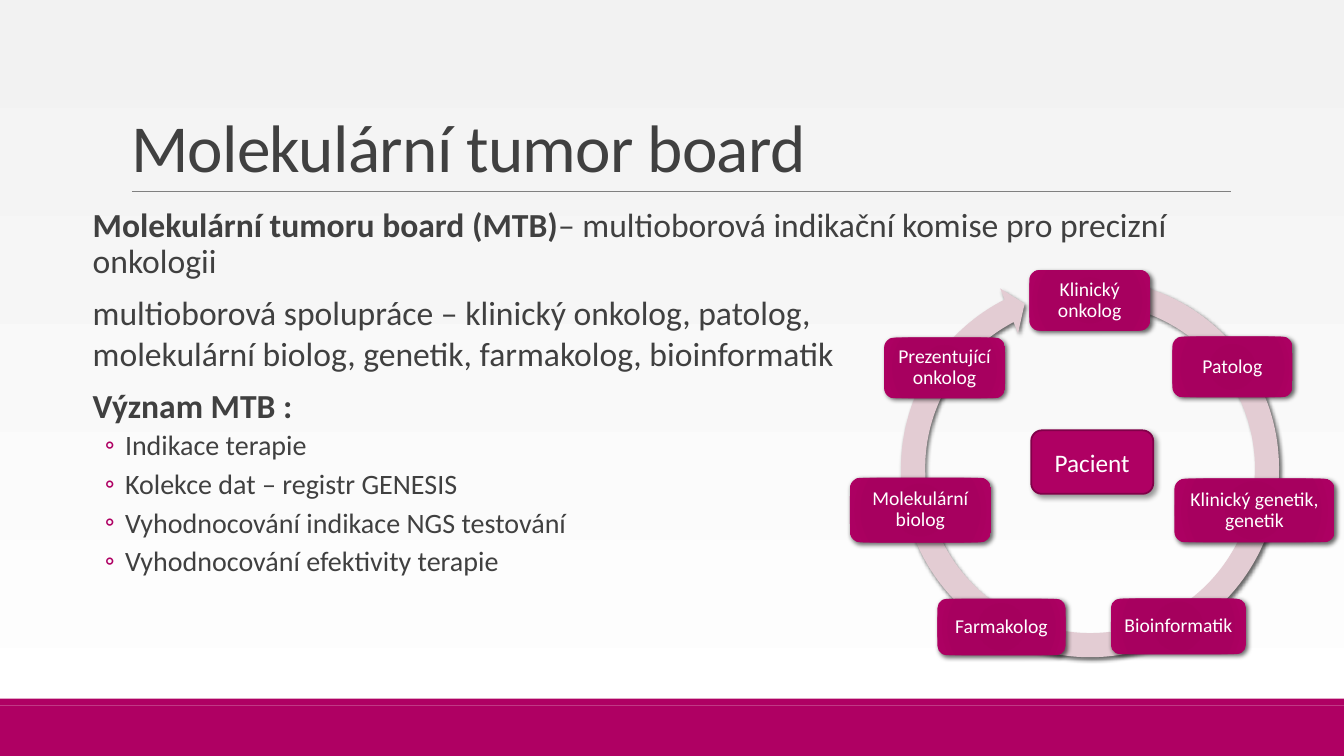
from dataclasses import dataclass

from lxml import etree
from pptx import Presentation, util as u
from pptx.dml.color import RGBColor
from pptx.enum import shapes, text
from pptx.oxml import ns


@dataclass(frozen=True)
class Theme:
    font: str = "Calibri"
    accent: str = "AF0063"
    accent_edge: str = "810049"
    ring: str = "E3CCD3"
    ink: str = "404040"
    rule: str = "808080"
    light: str = "FFFFFF"
    background: tuple = ("F2F2F2", "FFFFFF")
    card_stops: tuple = ((0, "A3005C"), (34, "A5005D"), (70, "A7005F"), (100, "AF0063"))
    title_size: int = 48
    body_size: int = 24
    list_size: int = 20
    centre_size: int = 18
    card_size: int = 14


def add_xml(parent, tag, **attributes):
    return etree.SubElement(parent, ns.qn(tag), {k: str(v) for k, v in attributes.items()})


class SlideBuilder:
    """Places elements on a grid of 100 columns by 100 rows."""

    def __init__(self, presentation, theme):
        self.theme = theme
        self.column = presentation.slide_width / 100
        self.row = presentation.slide_height / 100
        self.slide = presentation.slides.add_slide(presentation.slide_layouts[1])

    def box(self, left, top, width, height):
        return (round(left * self.column), round(top * self.row),
                round(width * self.column), round(height * self.row))

    def background(self):
        fill = self.slide.background.fill
        fill.gradient()
        fill.gradient_angle = 270
        for stop, color in zip(fill.gradient_stops, self.theme.background):
            stop.color.rgb = RGBColor.from_string(color)

    def style(self, paragraph, size, color, bold=None):
        font = paragraph.font
        font.name, font.size, font.bold = self.theme.font, u.Pt(size), bold
        font.color.rgb = RGBColor.from_string(color)

    def place(self, placeholder, area, anchor):
        placeholder.left, placeholder.top, placeholder.width, placeholder.height = self.box(*area)
        frame = placeholder.text_frame
        frame.auto_size = text.MSO_AUTO_SIZE.NONE
        frame.word_wrap = True
        frame.vertical_anchor = anchor
        return frame

    def title(self, wording, area):
        frame = self.place(self.slide.shapes.title, area, text.MSO_ANCHOR.BOTTOM)
        paragraph = frame.paragraphs[0]
        paragraph.alignment = text.PP_ALIGN.LEFT
        paragraph.line_spacing = 0.85
        self.style(paragraph, self.theme.title_size, self.theme.ink)
        run = paragraph.add_run()
        run.text = wording
        run._r.get_or_add_rPr().set("spc", "-50")

    def body(self, items, area):
        """Items are (level, line spacing, space before, space after, [(wording, bold)])."""
        frame = self.place(self.slide.placeholders[1], area, text.MSO_ANCHOR.TOP)
        frame.margin_left = frame.margin_right = 0
        for index, (level, spacing, before, after, pieces) in enumerate(items):
            paragraph = frame.add_paragraph() if index else frame.paragraphs[0]
            paragraph.level = level
            paragraph.line_spacing = spacing
            paragraph.space_before, paragraph.space_after = u.Pt(before), u.Pt(after)
            self.bullet(paragraph, level)
            agreed = pieces[0][1] if len(pieces) == 1 else None
            size = self.theme.list_size if level else self.theme.body_size
            self.style(paragraph, size, self.theme.ink, agreed)
            for wording, bold in pieces:
                run = paragraph.add_run()
                run.text = wording
                if agreed is None:
                    run.font.bold = bold

    def bullet(self, paragraph, level):
        properties = paragraph._p.get_or_add_pPr()
        indent, hanging = (0.42, -0.2) if level else (0.1, 0)
        properties.set("marL", str(u.Inches(indent)))
        properties.set("indent", str(u.Inches(hanging)))
        if level:
            add_xml(add_xml(properties, "a:buClr"), "a:srgbClr", val=self.theme.accent)
            add_xml(properties, "a:buFont", typeface=self.theme.font)
            add_xml(properties, "a:buChar", char="◦")
        else:
            add_xml(properties, "a:buNone")

    def shape(self, kind, area, fill, shadow=None):
        """Shadow is (opacity percent, blur points, distance points)."""
        shape = self.slide.shapes.add_shape(kind, *self.box(*area))
        shape.fill.solid()
        shape.fill.fore_color.rgb = RGBColor.from_string(fill)
        shape.line.fill.background()
        shape.shadow.inherit = False
        if shadow:
            opacity, blur, distance = shadow
            effects = shape._element.spPr.find(ns.qn("a:effectLst"))
            outer = add_xml(effects, "a:outerShdw", blurRad=u.Pt(blur), dist=u.Pt(distance),
                            dir=45 * 60000, algn="ctr", rotWithShape=0)
            add_xml(add_xml(outer, "a:srgbClr", val="000000"), "a:alpha", val=opacity * 1000)
        return shape

    def label(self, shape, wording, size, margin, spacing):
        frame = shape.text_frame
        frame.word_wrap = True
        frame.vertical_anchor = text.MSO_ANCHOR.MIDDLE
        frame.margin_left = frame.margin_right = u.Inches(margin)
        frame.margin_top = frame.margin_bottom = u.Inches(margin)
        paragraph = frame.paragraphs[0]
        paragraph.text = wording
        paragraph.alignment = text.PP_ALIGN.CENTER
        paragraph.line_spacing = spacing
        self.style(paragraph, size, self.theme.light)

    def card(self, wording, area):
        shape = self.shape(shapes.MSO_SHAPE.ROUNDED_RECTANGLE, area, self.theme.accent, (60, 3.5, 2))
        shape.fill.gradient()
        gradient = shape._element.spPr.find(ns.qn("a:gradFill"))
        for child in list(gradient):
            gradient.remove(child)
        stops = add_xml(gradient, "a:gsLst")
        for position, color in self.theme.card_stops:
            add_xml(add_xml(stops, "a:gs", pos=position * 1000), "a:srgbClr", val=color)
        add_xml(add_xml(gradient, "a:path", path="circle"), "a:fillToRect",
                **dict.fromkeys("ltrb", 100000))
        self.label(shape, wording, self.theme.card_size, 0.09, 0.9)

    def centre(self, wording, area):
        shape = self.shape(shapes.MSO_SHAPE.ROUNDED_RECTANGLE, area, self.theme.accent, (40, 4, 3))
        shape.line.color.rgb = RGBColor.from_string(self.theme.accent_edge)
        shape.line.width = u.Pt(1.25)
        self.label(shape, wording, self.theme.centre_size, 0.05, 1.0)

    def ring(self, area, adjustments):
        shape = self.shape(shapes.MSO_SHAPE.CIRCULAR_ARROW, area, self.theme.ring, (60, 3, 2))
        for index, value in enumerate(adjustments):
            shape.adjustments[index] = value

    def rule(self, left, right, top):
        x, y, width, _ = self.box(left, top, right - left, 0)
        line = self.slide.shapes.add_connector(shapes.MSO_CONNECTOR.STRAIGHT, x, y, x + width, y)
        line.line.color.rgb = RGBColor.from_string(self.theme.rule)
        line.line.width = u.Pt(0.5)
        add_xml(line._element.spPr, "a:effectLst")


BODY = [
    (0, 0.9, 12, 8, [("Molekulární tumoru board (MTB)", True),
                     ("– multioborová indikační komise pro precizní onkologii", False)]),
    (0, 1.0, 0, 0, [("multioborová spolupráce – klinický onkolog, patolog,", False)]),
    (0, 1.0, 0, 0, [("molekulární biolog, genetik, farmakolog, bioinformatik", False)]),
    (0, 0.9, 12, 2, [("Význam MTB :", True)]),
] + [(1, 0.9, 2, 4, [(wording, False)]) for wording in (
    "Indikace terapie", "Kolekce dat – registr GENESIS",
    "Vyhodnocování indikace NGS testování", "Vyhodnocování efektivity terapie")]

BOARD_MEMBERS = {
    "Klinický onkolog": (76.58, 35.73, 9, 8),
    "Patolog": (87.23, 44.53, 8.93, 8),
    "Klinický genetik, genetik": (87.38, 63.33, 11.93, 8.4),
    "Bioinformatik": (82.65, 79.2, 10.05, 7.33),
    "Farmakolog": (69.75, 79.2, 9.53, 7.47),
    "Molekulární biolog": (63.23, 63.2, 10.5, 8.53),
    "Prezentující onkolog": (65.78, 44.67, 9, 8),
}


def main():
    presentation = Presentation()
    presentation.slide_width, presentation.slide_height = u.Inches(13.33), u.Inches(7.5)
    theme = Theme()
    builder = SlideBuilder(presentation, theme)
    builder.background()
    for top, height in ((93.33, 6.67), (92.4, 0.93)):
        builder.shape(shapes.MSO_SHAPE.RECTANGLE, (0, top, 100, height), theme.accent)
    builder.rule(9.82, 91.58, 25.33)
    builder.title("Molekulární tumor board", (9, 4.13, 82.5, 21.2))
    builder.body(BODY, (6.15, 26.93, 82.5, 58.67))
    builder.ring((66.15, 35.33, 29.92, 53.2), (0.06, 3.31, 145.67, 169.21, 0.06))
    for wording, area in BOARD_MEMBERS.items():
        builder.card(wording, area)
    builder.centre("Pacient", (76.73, 56.93, 9.08, 8.4))
    presentation.save("out.pptx")


if __name__ == "__main__":
    main()
